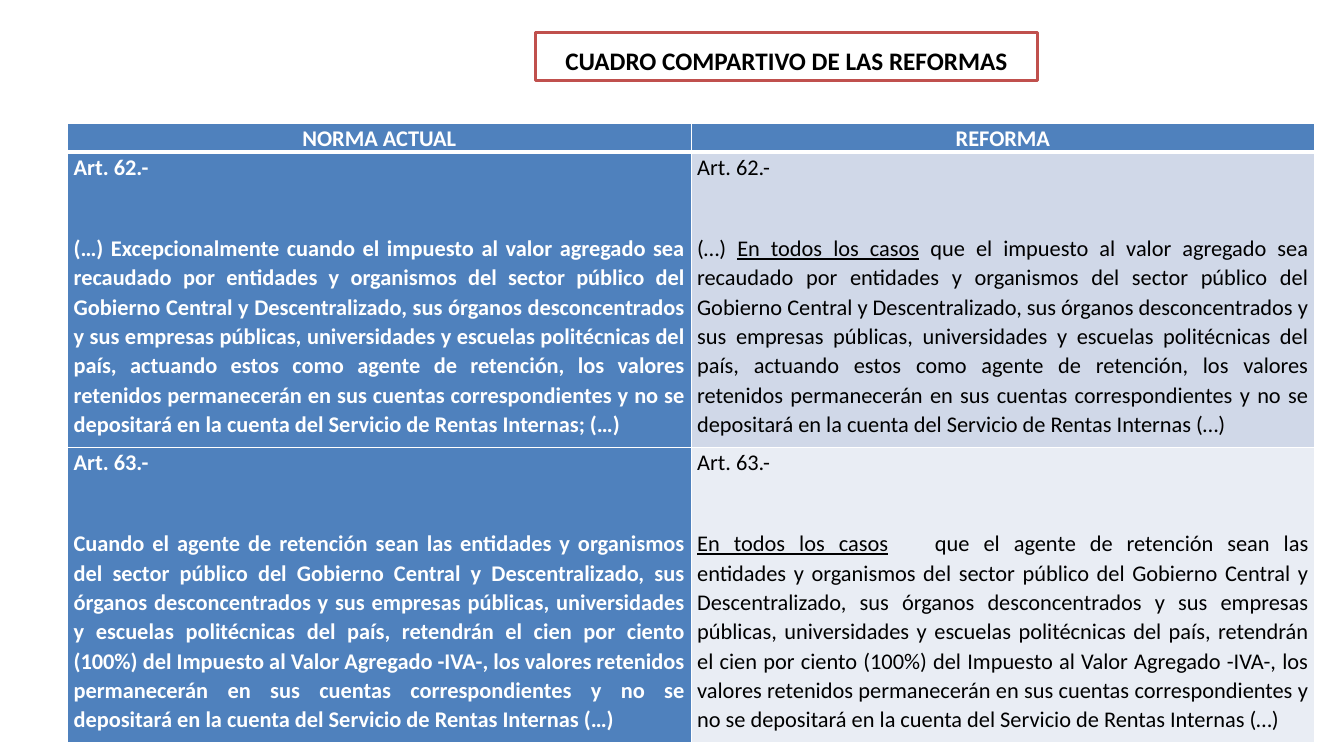
"""Build a slide that compares two tax articles before and after a reform."""
from lxml.etree import SubElement
from pptx import Presentation
from pptx.dml.color import RGBColor
from pptx.enum.shapes import MSO_SHAPE
from pptx.enum.text import MSO_ANCHOR, PP_ALIGN
from pptx.oxml.ns import qn
from pptx.util import Inches, Pt

HUES = {"white": "FFFFFF", "black": "000000", "red": "C0504D",
        "blue": "4F81BD", "band": "D0D8E8", "pale": "E9EDF4"}

BODIES = ("sector público del Gobierno Central y Descentralizado, sus órganos "
          "desconcentrados y sus empresas públicas, universidades y escuelas "
          "politécnicas del país, ")
KEPT = ("los valores retenidos permanecerán en sus cuentas correspondientes y no "
        "se depositará en la cuenta del Servicio de Rentas Internas")
VAT = ("el impuesto al valor agregado sea recaudado por entidades y organismos del "
       + BODIES + "actuando estos como agente de retención, " + KEPT)
AGENT = ("el agente de retención sean las entidades y organismos del " + BODIES
         + "retendrán el cien por ciento (100%) del Impuesto al Valor Agregado "
         "-IVA-, " + KEPT + " (…)")
CASES = ("En todos los casos", True)

HEADS = ["NORMA ACTUAL", "REFORMA"]
ROWS = [
    ("Art. 62.-", "band",
     [("(…) Excepcionalmente cuando " + VAT + "; (…)", False)],
     [("(…) ", False), CASES, (" que " + VAT + " (…)", False)]),
    ("Art. 63.-", "pale",
     [("Cuando " + AGENT, False)],
     [CASES, (" \tque " + AGENT, False)]),
]


def color(name):
    """Return the named colour."""
    return RGBColor.from_string(HUES[name])


def write(para, text, size=16, hue="black", bold=False, under=False,
          align=PP_ALIGN.JUSTIFY, line=1.07, after=8):
    """Add a formatted run to a paragraph."""
    para.alignment = align
    para.line_spacing = line
    para.space_after = Pt(after)
    run = para.add_run()
    run.text = text
    font = run.font
    font.name = "Calibri"
    font.size = Pt(size)
    font.bold = bold
    font.underline = under
    font.color.rgb = color(hue)


def add_title(slide, text):
    """Draw the framed title."""
    box = slide.shapes.add_shape(MSO_SHAPE.RECTANGLE, Inches(5.31), Inches(0.32),
                                 Inches(4.98), Inches(0.48))
    box.shadow.inherit = False
    box.fill.solid()
    box.fill.fore_color.rgb = color("white")
    box.line.color.rgb = color("red")
    box.line.width = Pt(2)
    frame = box.text_frame
    frame.word_wrap = True
    frame.vertical_anchor = MSO_ANCHOR.BOTTOM
    write(frame.paragraphs[0], text, size=18, bold=True,
          align=PP_ALIGN.CENTER, line=1.0, after=0)


def add_edge(cell, side, width):
    """Give one side of a cell a white border."""
    edge = SubElement(cell._tc.get_or_add_tcPr(), qn("a:ln" + side),
                      w=str(Pt(width)))
    fill = SubElement(edge, qn("a:solidFill"))
    SubElement(fill, qn("a:srgbClr"), val=HUES["white"])


def style(cell, hue, top=1, bottom=1):
    """Set margins, borders and fill of a cell."""
    cell.margin_left = cell.margin_right = Inches(0.06)
    cell.margin_top = cell.margin_bottom = Inches(0)
    for side, width in zip("LRTB", (1, 1, top, bottom)):
        add_edge(cell, side, width)
    cell.fill.solid()
    cell.fill.fore_color.rgb = color(hue)


def fill_cell(cell, label, parts, **form):
    """Write an article label and, after a gap, its text."""
    frame = cell.text_frame
    write(frame.paragraphs[0], label, after=37, **form)
    body = frame.add_paragraph()
    for text, under in parts:
        write(body, text, under=under, **form)


def add_grid(slide):
    """Draw the table of current and reformed articles."""
    frame = slide.shapes.add_table(len(ROWS) + 1, len(HEADS), Inches(0.67),
                                   Inches(1.22), Inches(12.37), Inches(6.13))
    table = frame.table
    table.horz_banding = False
    for row, height in zip(table.rows, (0.21, 2.93, 2.93)):
        row.height = Inches(height)
    for col, head in enumerate(HEADS):
        cell = table.cell(0, col)
        style(cell, "blue", bottom=3)
        write(cell.text_frame.paragraphs[0], head, hue="white", bold=True,
              align=PP_ALIGN.CENTER)
    for row, (label, shade, old, new) in enumerate(ROWS, 1):
        left, right = table.cell(row, 0), table.cell(row, 1)
        for cell, hue in ((left, "blue"), (right, shade)):
            style(cell, hue, top=3 if row == 1 else 1)
        fill_cell(left, label, old, hue="white", bold=True)
        fill_cell(right, label, new)


def main():
    """Build and save the deck."""
    deck = Presentation()
    deck.slide_width = Inches(13.33)
    deck.slide_height = Inches(7.5)
    slide = deck.slides.add_slide(deck.slide_layouts[6])
    add_title(slide, "CUADRO COMPARTIVO DE LAS REFORMAS")
    add_grid(slide)
    deck.save("out.pptx")


if __name__ == "__main__":
    main()
